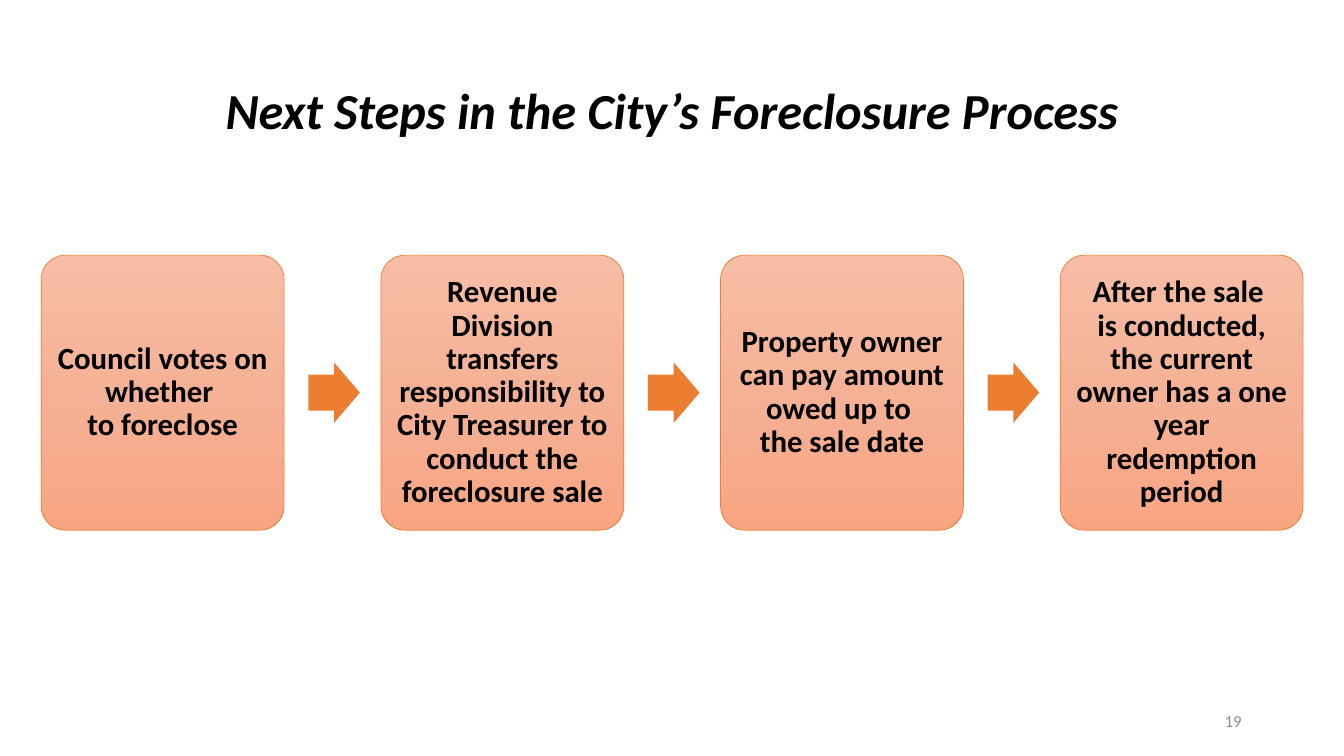
"""Build the foreclosure process slide: a title and four steps joined by arrows."""
from copy import deepcopy

from pptx import Presentation
from pptx.dml.color import RGBColor
from pptx.enum.shapes import MSO_SHAPE
from pptx.enum.text import MSO_ANCHOR, PP_ALIGN
from pptx.util import Cm, Pt

ROUNDED, ARROW = MSO_SHAPE.ROUNDED_RECTANGLE, MSO_SHAPE.RIGHT_ARROW
MIDDLE = MSO_ANCHOR.MIDDLE
CENTER, RIGHT = PP_ALIGN.CENTER, PP_ALIGN.RIGHT

TITLE = "Next Steps in the City’s Foreclosure Process"
STEPS = [
    "Council votes on whether \nto foreclose",
    "Revenue Division transfers responsibility to City Treasurer to conduct the foreclosure sale",
    "Property owner can pay amount owed up to \nthe sale date",
    "After the sale \nis conducted, the current owner has a one year redemption period",
]
PAGE = "19"
FONT = "Calibri"
COLORS = {"text": "000000", "page": "8C8C8C", "accent": "ED7D31"}
GRADIENT = [(0, "F7BDA5"), (0.5, "F5B196"), (1, "F8A582")]

LEFT, TOP, PITCH = 1.04, 6.43, 8.56
BOX_W, BOX_H = 6.12, 6.93
ARROW_W, ARROW_H, ARROW_GAP = 1.3, 1.52, 0.61


def color(name):
    return RGBColor.from_string(COLORS[name])


def write(sp, text, size, name, align, spacing=1.0, bold=False, italic=False):
    tf = sp.text_frame
    tf.word_wrap = True
    tf.vertical_anchor = MIDDLE
    p = tf.paragraphs[0]
    p.text = text
    p.alignment = align
    p.line_spacing = spacing
    for r in p.runs:
        r.font.name, r.font.size = FONT, Pt(size)
        r.font.bold, r.font.italic = bold, italic
        r.font.color.rgb = color(name)


def add_shape(slide, kind, x, y, w, h):
    sp = slide.shapes.add_shape(kind, Cm(x), Cm(y), Cm(w), Cm(h))
    sp.shadow.inherit = False
    return sp


def add_step(slide, x, text):
    sp = add_shape(slide, ROUNDED, x, TOP, BOX_W, BOX_H)
    sp.adjustments[0] = 0.1
    sp.fill.gradient()
    sp.fill.gradient_angle = 270
    first = sp._element.spPr.find(".//{*}gs")
    first.addnext(deepcopy(first))
    for stop, (position, value) in zip(sp.fill.gradient_stops, GRADIENT):
        stop.position = position
        stop.color.rgb = RGBColor.from_string(value)
    sp.line.color.rgb = color("accent")
    sp.line.width = Pt(0.5)
    tf = sp.text_frame
    tf.margin_left = tf.margin_right = Cm(0.2)
    write(sp, text, 22, "text", CENTER, 0.9, bold=True)


def add_arrow(slide, x):
    sp = add_shape(slide, ARROW, x, TOP + (BOX_H - ARROW_H) / 2, ARROW_W, ARROW_H)
    sp.adjustments[0] = 0.6
    sp.fill.solid()
    sp.fill.fore_color.rgb = color("accent")
    sp.line.fill.background()


def main():
    prs = Presentation()
    prs.slide_width, prs.slide_height = Cm(33.87), Cm(19.05)
    slide = prs.slides.add_slide(prs.slide_layouts[6])
    for i, text in enumerate(STEPS):
        x = LEFT + i * PITCH
        add_step(slide, x, text)
        if i < len(STEPS) - 1:
            add_arrow(slide, x + BOX_W + ARROW_GAP)
    title = slide.shapes.add_textbox(Cm(2.33), Cm(1.01), Cm(29.21), Cm(3.68))
    write(title, TITLE, 36, "text", CENTER, 0.9, bold=True, italic=True)
    page = slide.shapes.add_textbox(Cm(23.92), Cm(17.66), Cm(7.62), Cm(1.01))
    write(page, PAGE, 12, "page", RIGHT)
    prs.save("out.pptx")


if __name__ == "__main__":
    main()
